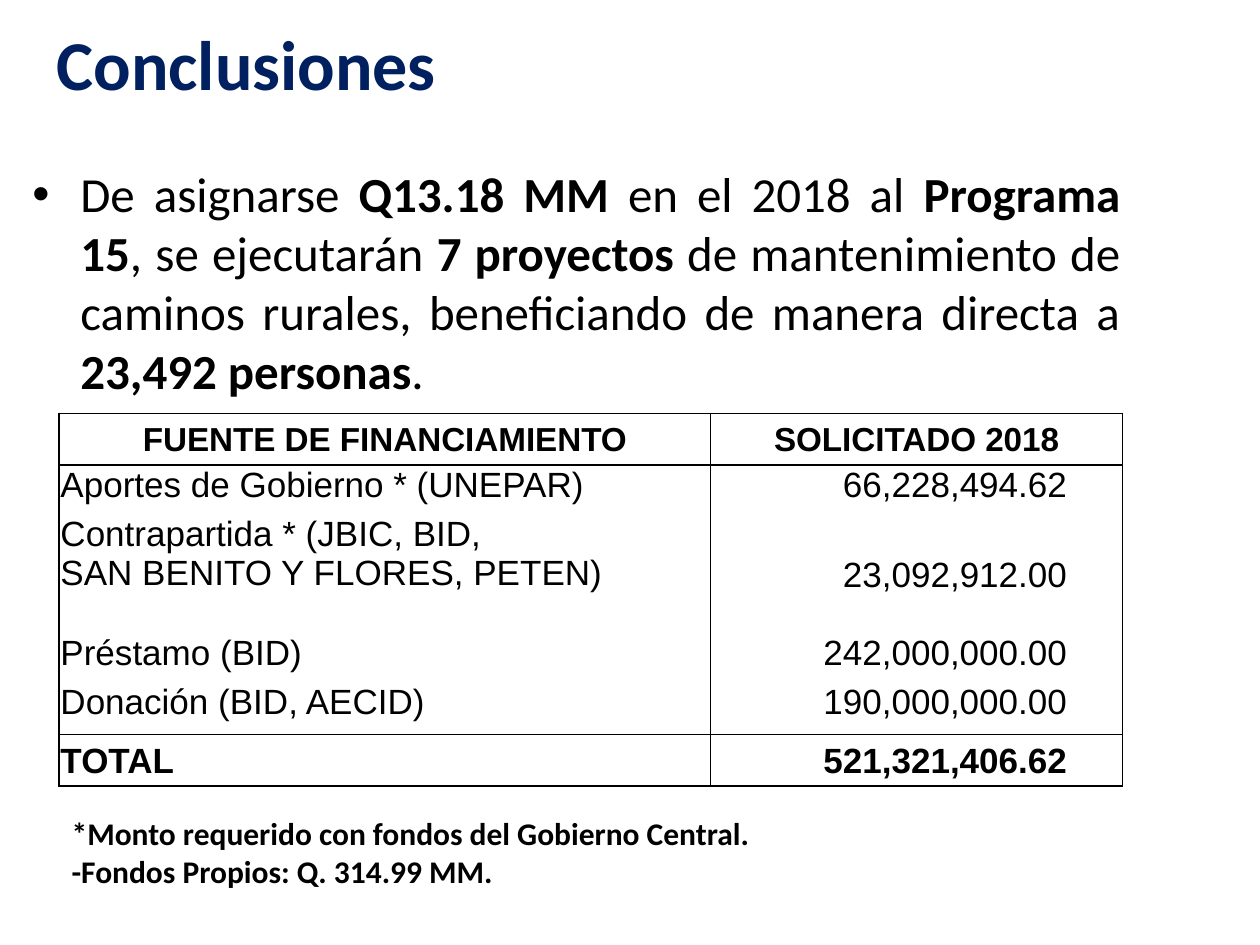
from dataclasses import dataclass
from lxml import etree
from pptx import Presentation
from pptx.dml.color import RGBColor
from pptx.enum.text import MSO_ANCHOR, PP_ALIGN
from pptx.oxml.ns import qn
from pptx.util import Inches, Pt

LEFT, MID, RIGHT = PP_ALIGN.LEFT, PP_ALIGN.CENTER, PP_ALIGN.RIGHT
JUST = PP_ALIGN.JUSTIFY
TOP, CENTER = MSO_ANCHOR.TOP, MSO_ANCHOR.MIDDLE


@dataclass(frozen=True)
class Theme:
    navy: str = "002060"
    black: str = "000000"
    sans: str = "Calibri"
    grid: str = "Arial"
    title: int = 40
    body: int = 28
    head: int = 19
    cell: int = 20
    note: int = 18


THEME = Theme()

CLAIM = [
    ("De asignarse ", False),
    ("Q13.18 MM ", True),
    ("en el 2018 al ", False),
    ("Programa 15", True),
    (", se ejecutarán ", False),
    ("7 proyectos ", True),
    ("de mantenimiento de caminos rurales, beneficiando de manera directa a ", False),
    ("23,492 personas", True),
    (".", False),
]
ROWS = [
    ("FUENTE DE FINANCIAMIENTO", "SOLICITADO 2018"),
    ("Aportes de Gobierno * (UNEPAR)", "66,228,494.62"),
    ("Contrapartida * (JBIC, BID,\nSAN BENITO Y FLORES, PETEN)", "23,092,912.00"),
    ("Préstamo (BID)", "242,000,000.00"),
    ("Donación (BID, AECID)", "190,000,000.00"),
    ("TOTAL", "521,321,406.62"),
]
WIDTHS = (5.17, 3.27)
HEIGHTS = (0.41, 0.39, 0.94, 0.39, 0.42, 0.41)
NOTES = "*Monto requerido con fondos del Gobierno Central.\n-Fondos Propios: Q. 314.99 MM."


def style(font, size, name=THEME.sans, color=THEME.black, bold=False):
    font.size, font.name, font.bold = Pt(size), name, bold
    font.color.rgb = RGBColor.from_string(color)


def add_box(slide, box):
    frame = slide.shapes.add_textbox(*map(Inches, box)).text_frame
    frame.word_wrap = True
    return frame


def add_title(slide, box):
    frame = add_box(slide, box)
    frame.vertical_anchor = CENTER
    frame.text = "Conclusiones"
    style(frame.paragraphs[0].runs[0].font, THEME.title, color=THEME.navy, bold=True)


def add_claim(slide, box):
    para = add_box(slide, box).paragraphs[0]
    para.alignment = JUST
    props = para._p.get_or_add_pPr()
    props.set("marL", str(Inches(0.38)))
    props.set("indent", str(Inches(-0.38)))
    etree.SubElement(props, qn("a:buFont"), typeface=THEME.grid)
    etree.SubElement(props, qn("a:buChar"), char="•")
    for text, bold in CLAIM:
        run = para.add_run()
        run.text = text
        style(run.font, THEME.body, bold=bold)


def add_edges(cell, sides):
    props = cell._tc.get_or_add_tcPr()
    for side in "LRTB":
        line = etree.SubElement(props, qn("a:ln" + side), w=str(Pt(1)))
        if side in sides:
            fill = etree.SubElement(line, qn("a:solidFill"))
            etree.SubElement(fill, qn("a:srgbClr"), val=THEME.black)
        else:
            etree.SubElement(line, qn("a:noFill"))


def fill_cell(cell, text, row, col):
    last = len(ROWS) - 1
    head, strong = row == 0, row in (0, last)
    sides = "LR"
    if row in (0, 1, last):
        sides += "T"
    if row in (0, last - 1, last):
        sides += "B"
    add_edges(cell, sides)
    cell.fill.background()
    cell.margin_left = cell.margin_right = cell.margin_top = Inches(0.01)
    cell.margin_bottom = 0
    cell.vertical_anchor = CENTER if strong else TOP
    cell.text = text
    align = MID if head else LEFT
    if col and not head:
        align = RIGHT
        cell.margin_right = Inches(0.44)
        lines = ROWS[row][0].count("\n")
        cell.margin_top = Inches(0.01 + 0.32 * lines)
    for para in cell.text_frame.paragraphs:
        para.alignment = align
        size = THEME.head if head else THEME.cell
        style(para.runs[0].font, size, THEME.grid, bold=strong)


def add_funds(slide, box):
    table = slide.shapes.add_table(len(ROWS), len(WIDTHS), *map(Inches, box)).table
    table.first_row = table.horz_banding = False
    for col, width in zip(table.columns, WIDTHS):
        col.width = Inches(width)
    for row, height in zip(table.rows, HEIGHTS):
        row.height = Inches(height)
    for row, texts in enumerate(ROWS):
        for col, text in enumerate(texts):
            fill_cell(table.cell(row, col), text, row, col)


def add_notes(slide, box):
    frame = add_box(slide, box)
    frame.text = NOTES
    for para in frame.paragraphs:
        style(para.runs[0].font, THEME.note, bold=True)


def main():
    deck = Presentation()
    deck.slide_width, deck.slide_height = Inches(10), Inches(7.5)
    slide = deck.slides.add_slide(deck.slide_layouts[6])
    add_claim(slide, (0.16, 1.25, 8.83, 1.95))
    add_funds(slide, (0.47, 3.28, sum(WIDTHS), sum(HEIGHTS)))
    add_notes(slide, (0.47, 6.41, 7.27, 0.71))
    add_title(slide, (0.35, 0.21, 5.21, 0.57))
    deck.save("out.pptx")


if __name__ == "__main__":
    main()
